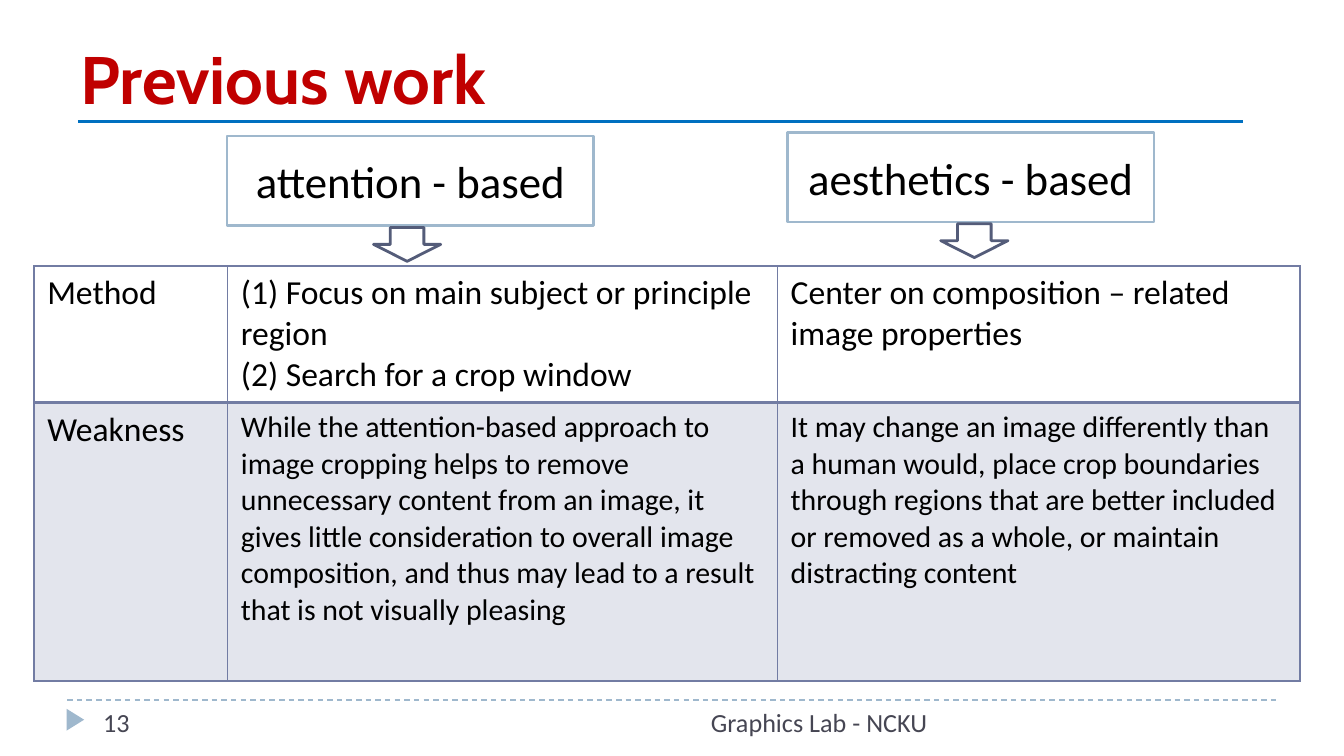
from lxml.etree import SubElement
from pptx import Presentation
from pptx.dml.color import RGBColor
from pptx.enum.dml import MSO_LINE_DASH_STYLE as Dash
from pptx.enum.shapes import MSO_CONNECTOR as Connector, MSO_SHAPE as Shape
from pptx.enum.text import MSO_ANCHOR as Anchor, PP_ALIGN as Align
from pptx.oxml.ns import qn
from pptx.util import Cm, Pt

WHITE, BLACK, RED, BLUE = "FFFFFF", "000000", "C00000", "0070C0"
PALE_BLUE, SLATE, ARROW_EDGE = "9FB8CD", "727CA3", "545C79"
TINT, FOOTER_GREY = "E3E5ED", "464653"

COLUMN_WIDTHS = (3.66, 10.39, 9.88)
METHOD_ROW = ["Method",
              "(1) Focus on main subject or principle region\n"
              "(2) Search for a crop window",
              "Center on composition – related image properties"]
WEAKNESS_ROW = ["Weakness",
                "While the attention-based approach to image cropping helps to "
                "remove unnecessary content from an image, it gives little "
                "consideration to overall image composition, and thus may lead "
                "to a result that is not visually pleasing",
                "It may change an image differently than a human would, place "
                "crop boundaries through regions that are better included or "
                "removed as a whole, or maintain distracting content"]


def color(value):
    return RGBColor.from_string(value)


def write(frame, text, size=18, font="Calibri", ink=BLACK, bold=False,
          align=Align.LEFT, anchor=Anchor.TOP):
    """Fill a text frame, one paragraph per line of text."""
    frame.word_wrap = True
    frame.vertical_anchor = anchor
    for index, line in enumerate(text.split("\n")):
        para = frame.add_paragraph() if index else frame.paragraphs[0]
        para.alignment = align
        span = para.add_run()
        span.text = line
        span.font.size = Pt(size)
        span.font.name = font
        span.font.bold = bold
        span.font.color.rgb = color(ink)


def add_text(page, left, top, width, height, text, **style):
    box = page.shapes.add_textbox(Cm(left), Cm(top), Cm(width), Cm(height))
    write(box.text_frame, text, **style)


def add_rule(page, left, right, y, ink, weight, dash=None):
    rule = page.shapes.add_connector(Connector.STRAIGHT, Cm(left), Cm(y),
                                     Cm(right), Cm(y))
    rule.line.color.rgb = color(ink)
    rule.line.width = Pt(weight)
    if dash:
        rule.line.dash_style = dash
    SubElement(rule._element.spPr, qn("a:effectLst"))


def add_figure(page, kind, left, top, width, height, fill, edge=None):
    figure = page.shapes.add_shape(kind, Cm(left), Cm(top), Cm(width), Cm(height))
    figure.shadow.inherit = False
    figure.fill.solid()
    figure.fill.fore_color.rgb = color(fill)
    if edge:
        figure.line.color.rgb = color(edge)
        figure.line.width = Pt(1.5)
    else:
        figure.line.fill.background()
    return figure


def add_heading(page, left, top, text, arrow_left):
    """Draw a column heading with the arrow that points to the table."""
    box = add_figure(page, Shape.RECTANGLE, left, top, 6.93, 1.7, WHITE, PALE_BLUE)
    write(box.text_frame, text, size=24, align=Align.CENTER, anchor=Anchor.MIDDLE)
    add_figure(page, Shape.DOWN_ARROW, arrow_left, top + 1.73, 1.27, 0.64,
               WHITE, ARROW_EDGE)


def set_borders(cell, **weights):
    properties = cell._tc.get_or_add_tcPr()
    for side in "LRTB":
        line = SubElement(properties, qn(f"a:ln{side}"),
                          w=str(Pt(weights.get(side, 1))))
        fill = SubElement(line, qn("a:solidFill"))
        SubElement(fill, qn("a:srgbClr"), val=SLATE)


def fill_row(table, index, texts, sizes, height, fill, **weights):
    table.rows[index].height = Cm(height)
    for cell, text, size in zip(table.rows[index].cells, texts, sizes):
        set_borders(cell, **weights)
        cell.fill.solid()
        cell.fill.fore_color.rgb = color(fill)
        write(cell.text_frame, text, size=size)


def add_comparison(page):
    table = page.shapes.add_table(2, 3, Cm(0.64), Cm(5.03),
                                  Cm(sum(COLUMN_WIDTHS)), Cm(7.84)).table
    table.first_row = table.horz_banding = False
    for column, width in zip(table.columns, COLUMN_WIDTHS):
        column.width = Cm(width)
    fill_row(table, 0, METHOD_ROW, (18, 18, 18), 2.58, WHITE, B=2)
    fill_row(table, 1, WEAKNESS_ROW, (18, 16, 16), 5.26, TINT, T=2)


def main():
    deck = Presentation()
    deck.slide_width, deck.slide_height = Cm(25.4), Cm(14.29)
    page = deck.slides.add_slide(deck.slide_layouts[6])

    add_rule(page, 1.27, 24.13, 13.23, PALE_BLUE, 0.75, Dash.DASH)
    marker = add_figure(page, Shape.ISOSCELES_TRIANGLE, 1.22, 13.44, 0.41, 0.33,
                        PALE_BLUE)
    marker.rotation = 90
    add_rule(page, 1.47, 23.5, 2.29, BLUE, 1.5)

    add_text(page, 1.27, 0.3, 22.86, 2.06, "Previous work", size=36, font="Cabin",
             ink=RED, bold=True, anchor=Anchor.BOTTOM)
    add_text(page, 8.05, 13.23, 9.73, 0.76, "Graphics Lab - NCKU", size=14,
             ink=FOOTER_GREY, align=Align.RIGHT)
    add_text(page, 1.7, 13.23, 5.51, 0.76, "13", size=14, ink=FOOTER_GREY)

    add_comparison(page)
    add_heading(page, 4.29, 2.57, "attention - based", 7.06)
    add_heading(page, 14.88, 2.5, "aesthetics - based", 17.78)
    deck.save("out.pptx")


if __name__ == "__main__":
    main()
